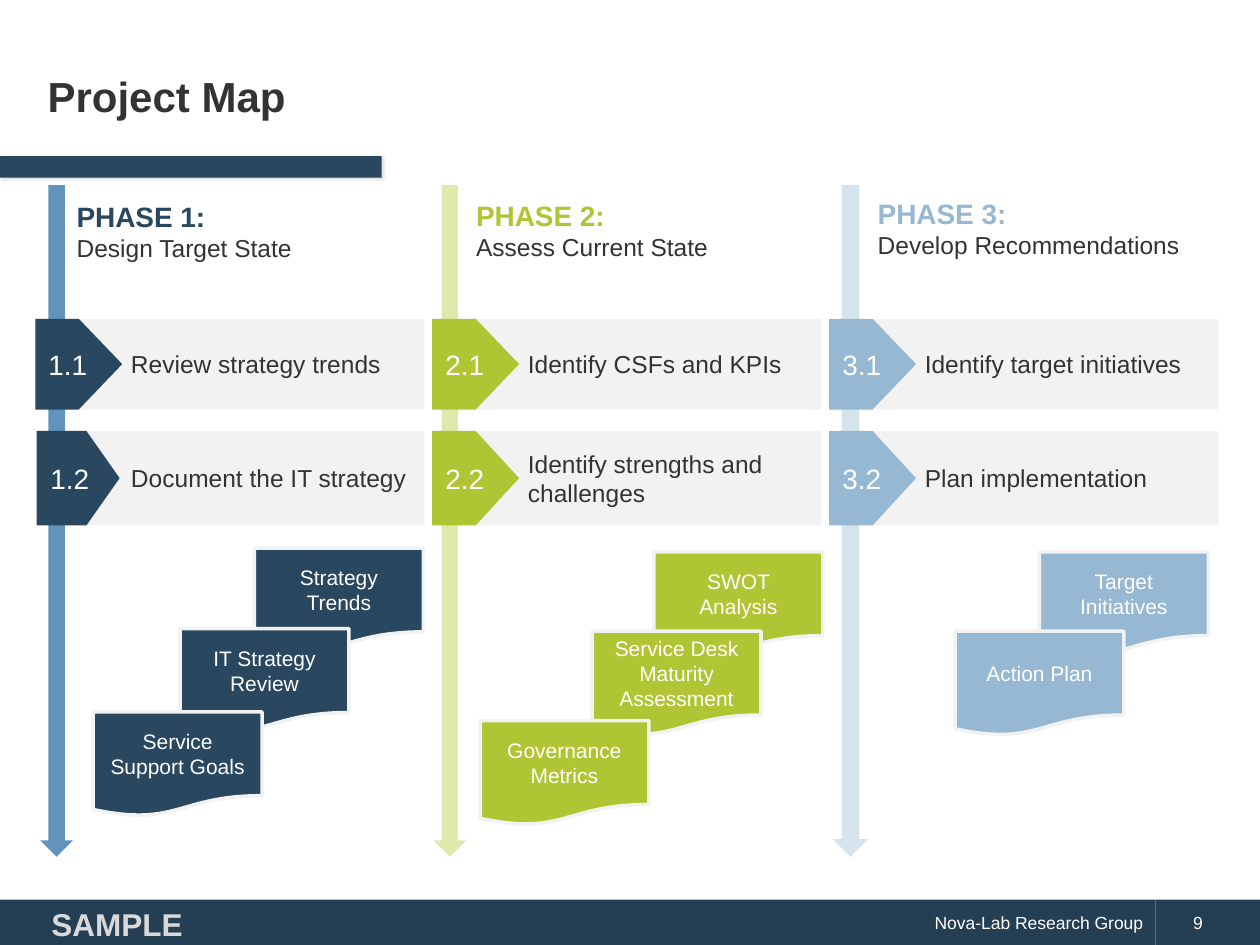
from dataclasses import dataclass

from lxml.etree import SubElement
from pptx import Presentation
from pptx.dml.color import RGBColor
from pptx.enum.shapes import MSO_SHAPE as Preset
from pptx.enum.text import MSO_ANCHOR as Anchor, PP_ALIGN as Align
from pptx.oxml.ns import qn
from pptx.util import Inches, Pt

WIDTH, HEIGHT = 10, 7.5
COLUMN_START, COLUMN_PITCH = 0.28, 3.15
STEP_ROWS = ((2.53, 0.72), (3.42, 0.75))
PLATE_WIDTH = 0.69
PANEL_OFFSET, PANEL_WIDTH = 0.33, 2.76
DOCUMENT_SIZE = (1.34, 0.83)
ARROW_TOP, ARROW_HEIGHT = 1.47, 5.33
FOOTER_TOP, FOOTER_HEIGHT = 7.14, 0.37
FOOTER_SPLIT = 0.917 * WIDTH

WHITE = RGBColor(0xFF, 0xFF, 0xFF)
INK = RGBColor(0x33, 0x33, 0x33)
PALE_GREY = RGBColor(0xF2, 0xF2, 0xF2)
LABEL_GREY = RGBColor(0xD9, 0xD9, 0xD9)
FOOTER_NAVY = RGBColor(0x24, 0x3F, 0x54)
NAVY = RGBColor(0x29, 0x47, 0x5F)
BLUE = RGBColor(0x62, 0x94, 0xBB)
GREEN = RGBColor(0xB0, 0xC5, 0x34)
PALE_GREEN = RGBColor(0xE0, 0xE9, 0xAC)
SKY = RGBColor(0x96, 0xB8, 0xD2)
PALE_SKY = RGBColor(0xD5, 0xE3, 0xED)


@dataclass
class Phase:
    title: str
    color: RGBColor
    arrow_color: RGBColor
    arrow: tuple
    heading_box: tuple
    heading_preset: Preset
    steps: tuple
    documents: tuple


PHASES = (
    Phase("Design Target State", NAVY, BLUE, (0.04, 0.26),
          (0.23, 1.52, 2.87, 0.63), Preset.RECTANGLE,
          ("Review strategy trends", "Document the IT strategy"),
          (("Strategy Trends", 1.74, 4.35), ("IT Strategy Review", 1.15, 4.99),
           ("Service Support Goals", 0.46, 5.65))),
    Phase("Assess Current State", GREEN, PALE_GREEN, (0.01, 0.26),
          (0.25, 1.44, 2.85, 0.77), Preset.RECTANGLE,
          ("Identify CSFs and KPIs", "Identify strengths and challenges"),
          (("SWOT Analysis", 1.76, 4.38),
           ("Service Desk Maturity Assessment", 1.27, 5.01),
           ("Governance Metrics", 0.38, 5.72))),
    Phase("Develop Recommendations", SKY, PALE_SKY, (0.03, 0.28),
          (0.25, 1.42, 2.84, 0.78), Preset.ROUNDED_RECTANGLE,
          ("Identify target initiatives", "Plan implementation"),
          (("Target Initiatives", 1.67, 4.38), ("Action Plan", 1, 5.01))),
)


def add_block(slide, preset, box, fill=None, outline=None):
    shape = slide.shapes.add_shape(preset, *map(Inches, box))
    shape.shadow.inherit = False
    if fill is None:
        shape.fill.background()
    else:
        shape.fill.solid()
        shape.fill.fore_color.rgb = fill
    if outline is None:
        shape.line.fill.background()
    else:
        shape.line.color.rgb = outline
        shape.line.width = Pt(2)
    return shape


def write(shape, lines, align=Align.LEFT, wrap=True, margin_left=0.1):
    frame = shape.text_frame
    frame_format = {"word_wrap": wrap, "vertical_anchor": Anchor.MIDDLE,
                    "margin_left": Inches(margin_left)}
    for name, value in frame_format.items():
        setattr(frame, name, value)
    for index, (text, size, color, bold) in enumerate(lines):
        paragraph = frame.add_paragraph() if index else frame.paragraphs[0]
        paragraph.alignment = align
        run = paragraph.add_run()
        run.text = text
        run.font.color.rgb = color
        font_format = {"name": "Arial", "size": Pt(size), "bold": bold}
        for name, value in font_format.items():
            setattr(run.font, name, value)


def add_label(slide, box, line, align=Align.LEFT):
    label = slide.shapes.add_textbox(*map(Inches, box))
    write(label, [line], align)


def add_soft_shadow(shape):
    effects = shape._element.spPr.find(qn("a:effectLst"))
    shadow = SubElement(effects, qn("a:outerShdw"), blurRad=str(Pt(2)),
                        dist=str(Pt(1)), dir="2700000")
    color = SubElement(shadow, qn("a:srgbClr"), val="000000")
    SubElement(color, qn("a:alpha"), val="14000")


def add_frame(slide):
    footer = add_block(slide, Preset.RECTANGLE,
                       (0, FOOTER_TOP, FOOTER_SPLIT, FOOTER_HEIGHT), FOOTER_NAVY)
    write(footer, [("Nova-Lab Research Group", 10, WHITE, False)], Align.RIGHT)
    number = add_block(slide, Preset.RECTANGLE,
                       (FOOTER_SPLIT, FOOTER_TOP, WIDTH - FOOTER_SPLIT, FOOTER_HEIGHT),
                       FOOTER_NAVY)
    write(number, [("9", 10, WHITE, False)], margin_left=0.3)
    accent = add_block(slide, Preset.RECTANGLE, (0, 1.24, 3.03, 0.17), NAVY)
    add_soft_shadow(accent)
    add_label(slide, (0.28, 0.28, 9.43, 0.96), ("Project Map", 24, INK, True))
    add_label(slide, (0.26, 7.21, 1.34, 0.24),
              ("SAMPLE", 18, LABEL_GREY, True), Align.CENTER)


def add_step(slide, left, row, number, text, color):
    top, height = row
    panel = add_block(slide, Preset.RECTANGLE,
                      (left + PANEL_OFFSET, top, PANEL_WIDTH, height), PALE_GREY)
    write(panel, [(text, 14, INK, False)], margin_left=0.43)
    inset = 0.01 if number == "1.2" else 0
    plate = add_block(slide, Preset.PENTAGON,
                      (left + inset, top, PLATE_WIDTH - 3 * inset, height), color)
    if inset:
        plate.adjustments[0] = 0.4
    write(plate, [(number, 16, WHITE, False)], Align.CENTER, wrap=False)


def add_document(slide, left, top, text, color):
    document = add_block(slide, Preset.FLOWCHART_DOCUMENT,
                         (left, top, *DOCUMENT_SIZE), color, PALE_GREY)
    write(document, [(text, 12, WHITE, False)], Align.CENTER)


def add_phase(slide, number, phase):
    left = COLUMN_START + (number - 1) * COLUMN_PITCH
    arrow_offset, arrow_width = phase.arrow
    add_block(slide, Preset.DOWN_ARROW,
              (left + arrow_offset, ARROW_TOP, arrow_width, ARROW_HEIGHT),
              phase.arrow_color)
    offset, *rest = phase.heading_box
    heading = add_block(slide, phase.heading_preset, (left + offset, *rest))
    write(heading, [(f"PHASE {number}:", 16, phase.color, True),
                    (phase.title, 14, INK, False)])
    for index, (row, text) in enumerate(zip(STEP_ROWS, phase.steps), 1):
        add_step(slide, left, row, f"{number}.{index}", text, phase.color)
    for text, offset, top in phase.documents:
        add_document(slide, left + offset, top, text, phase.color)


def main():
    presentation = Presentation()
    presentation.slide_width = Inches(WIDTH)
    presentation.slide_height = Inches(HEIGHT)
    slide = presentation.slides.add_slide(presentation.slide_layouts[6])
    add_frame(slide)
    for number, phase in enumerate(PHASES, 1):
        add_phase(slide, number, phase)
    presentation.save("out.pptx")


if __name__ == "__main__":
    main()
